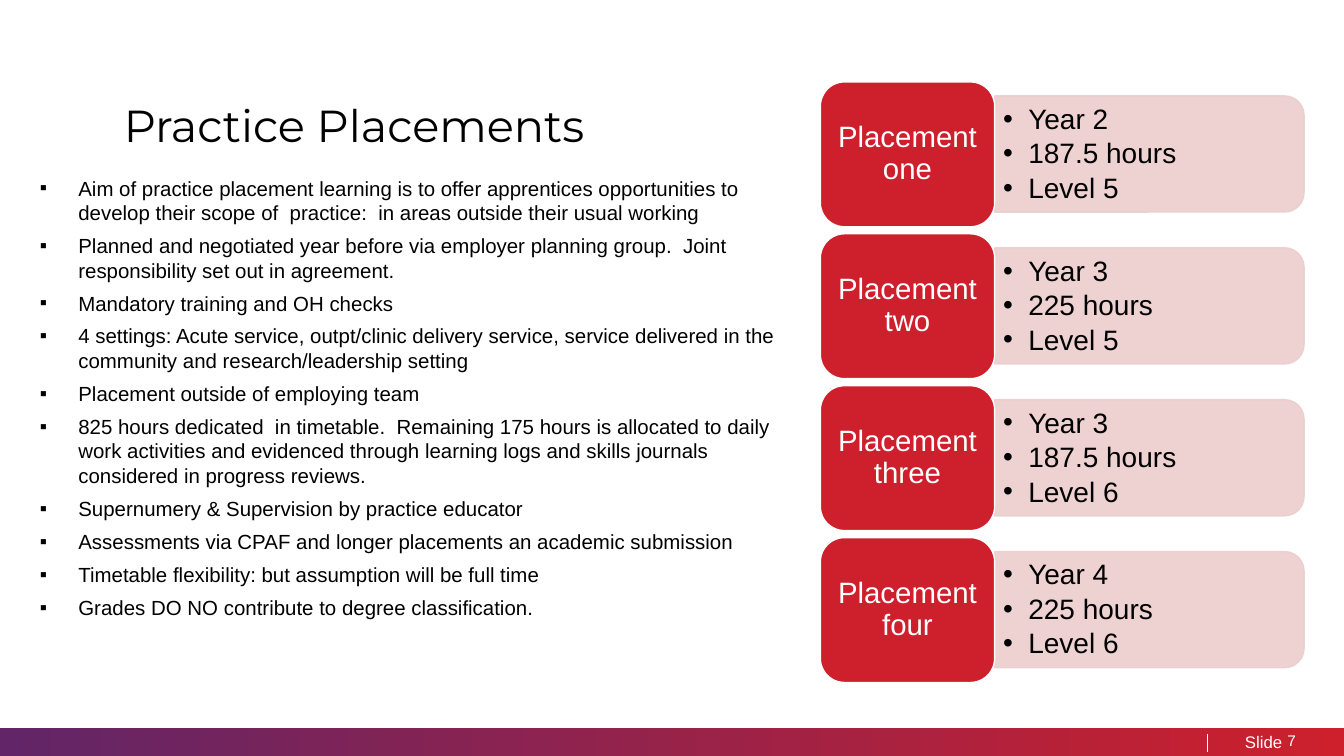
from pptx import Presentation
from pptx.dml.color import RGBColor
from pptx.enum.shapes import MSO_CONNECTOR, MSO_SHAPE
from pptx.enum.text import MSO_ANCHOR, MSO_AUTO_SIZE, PP_ALIGN
from pptx.oxml.ns import qn
from pptx.util import Pt
from lxml.etree import SubElement

COLORS = {"purple": "622567", "red": "CD202C", "pink": "EDCDCD",
          "white": "FFFFFF", "black": "000000"}
POINTS = [
    "Aim of practice placement learning is to offer apprentices opportunities to develop their scope of  practice:  in areas outside their usual working",
    "Planned and negotiated year before via employer planning group.  Joint responsibility set out in agreement.",
    "Mandatory training and OH checks",
    "4 settings: Acute service, outpt/clinic delivery service, service delivered in the community and research/leadership setting",
    "Placement outside of employing team",
    "825 hours dedicated  in timetable.  Remaining 175 hours is allocated to daily work activities and evidenced through learning logs and skills journals considered in progress reviews.",
    "Supernumery & Supervision by practice educator",
    "Assessments via CPAF and longer placements an academic submission",
    "Timetable flexibility: but assumption will be full time",
    "Grades DO NO contribute to degree classification.",
]
STAGES = [
    ("Placement one", ["Year 2", "187.5 hours", "Level 5"]),
    ("Placement two", ["Year 3", "225 hours", "Level 5"]),
    ("Placement three", ["Year 3", "187.5 hours", "Level 6"]),
    ("Placement four", ["Year 4", "225 hours", "Level 6"]),
]
TOP, PITCH = 58.5, 108.5


def color(name):
    """Return the named colour."""
    return RGBColor.from_string(COLORS[name])


def bullet(para, mark, indent):
    """Give a paragraph a hanging bullet."""
    props = para._p.get_or_add_pPr()
    props.set("marL", str(Pt(indent)))
    props.set("indent", str(-Pt(indent)))
    SubElement(props, qn("a:buFont")).set("typeface", "Arial")
    SubElement(props, qn("a:buChar")).set("char", mark)


def write(shape, lines, size, ink="black", face="Arial", align=PP_ALIGN.LEFT,
          anchor=MSO_ANCHOR.MIDDLE, inset=(0, 0), space=1.0, after=0,
          mark=None, indent=0):
    """Fill a shape with one paragraph per line."""
    frame = shape.text_frame
    frame.word_wrap = True
    frame.auto_size = MSO_AUTO_SIZE.NONE
    frame.vertical_anchor = anchor
    frame.margin_left = frame.margin_right = Pt(inset[0])
    frame.margin_top = frame.margin_bottom = Pt(inset[1])
    for i, line in enumerate(lines):
        para = frame.add_paragraph() if i else frame.paragraphs[0]
        if mark:
            bullet(para, mark, indent)
        para.alignment = align
        para.line_spacing = space
        para.space_before = Pt(0)
        para.space_after = Pt(after)
        run = para.add_run()
        run.text = line
        run.font.size = Pt(size)
        run.font.name = face
        run.font.color.rgb = color(ink)


def label(slide, box, lines, size, **style):
    """Add a text box."""
    write(slide.shapes.add_textbox(*map(Pt, box)), lines, size, **style)


def block(slide, kind, box, fill, edge):
    """Add a filled and outlined shape."""
    shape = slide.shapes.add_shape(kind, *map(Pt, box))
    shape.shadow.inherit = False
    shape.fill.solid()
    shape.fill.fore_color.rgb = color(fill)
    shape.line.color.rgb = color(edge)
    shape.line.width = Pt(1)
    return shape


def fade(shape, share):
    """Make the fill and line of a shape partly transparent."""
    for tint in shape._element.spPr.iter(qn("a:srgbClr")):
        SubElement(tint, qn("a:alpha")).set("val", str(share * 1000))


def heading(slide):
    """Place the slide title."""
    title = slide.shapes.title
    title.left, title.top, title.width, title.height = map(Pt, (88.5, 58.5, 430, 52.5))
    write(title, ["Practice Placements"], 32, face="Montserrat",
          anchor=MSO_ANCHOR.TOP, space=1.3, after=6)


def footer(slide):
    """Draw the gradient strip with the slide number."""
    strip = slide.shapes.add_shape(MSO_SHAPE.RECTANGLE, Pt(0), Pt(520), Pt(960), Pt(20))
    strip.shadow.inherit = False
    strip.line.fill.background()
    strip.fill.gradient()
    strip.fill.gradient_angle = 0
    for stop, name in zip(strip.fill.gradient_stops, ("purple", "red")):
        stop.color.rgb = color(name)
    rule = slide.shapes.add_connector(MSO_CONNECTOR.STRAIGHT, Pt(862.5), Pt(524), Pt(862.5), Pt(537))
    rule.line.color.rgb = color("white")
    rule.line.width = Pt(1)
    SubElement(rule._element.spPr, qn("a:effectLst"))
    label(slide, (886, 520, 30, 20), ["Slide"], 12, ink="white",
          align=PP_ALIGN.RIGHT, inset=(0, 3.5))
    label(slide, (919.5, 520, 24, 20), ["7"], 11, ink="white",
          inset=(0, 3.5), space=0.9)


def stage(slide, top, name, facts):
    """Draw one placement tile with its panel of facts."""
    panel = block(slide, MSO_SHAPE.ROUND_2_SAME_RECTANGLE,
                  (779.5, top - 59, 83, 221), "pink", "pink")
    panel.rotation = 90
    fade(panel, 90)
    label(slide, (710.5, top + 14.5, 217, 75), facts, 20, inset=(6, 3),
          space=0.9, after=3, mark="•", indent=18)
    tile = block(slide, MSO_SHAPE.ROUNDED_RECTANGLE,
                 (586, top, 124.5, 103.5), "red", "white")
    write(tile, [name], 21, ink="white", align=PP_ALIGN.CENTER,
          inset=(6, 3), space=0.9)


def main():
    """Build the slide and save it."""
    deck = Presentation()
    deck.slide_width, deck.slide_height = Pt(960), Pt(540)
    slide = deck.slides.add_slide(deck.slide_layouts[5])
    footer(slide)
    heading(slide)
    label(slide, (28.5, 125.5, 545, 382), POINTS, 14.6, anchor=MSO_ANCHOR.TOP,
          after=6, mark="▪", indent=27.5)
    for i, (name, facts) in enumerate(STAGES):
        stage(slide, TOP + i * PITCH, name, facts)
    deck.save("out.pptx")


if __name__ == "__main__":
    main()
